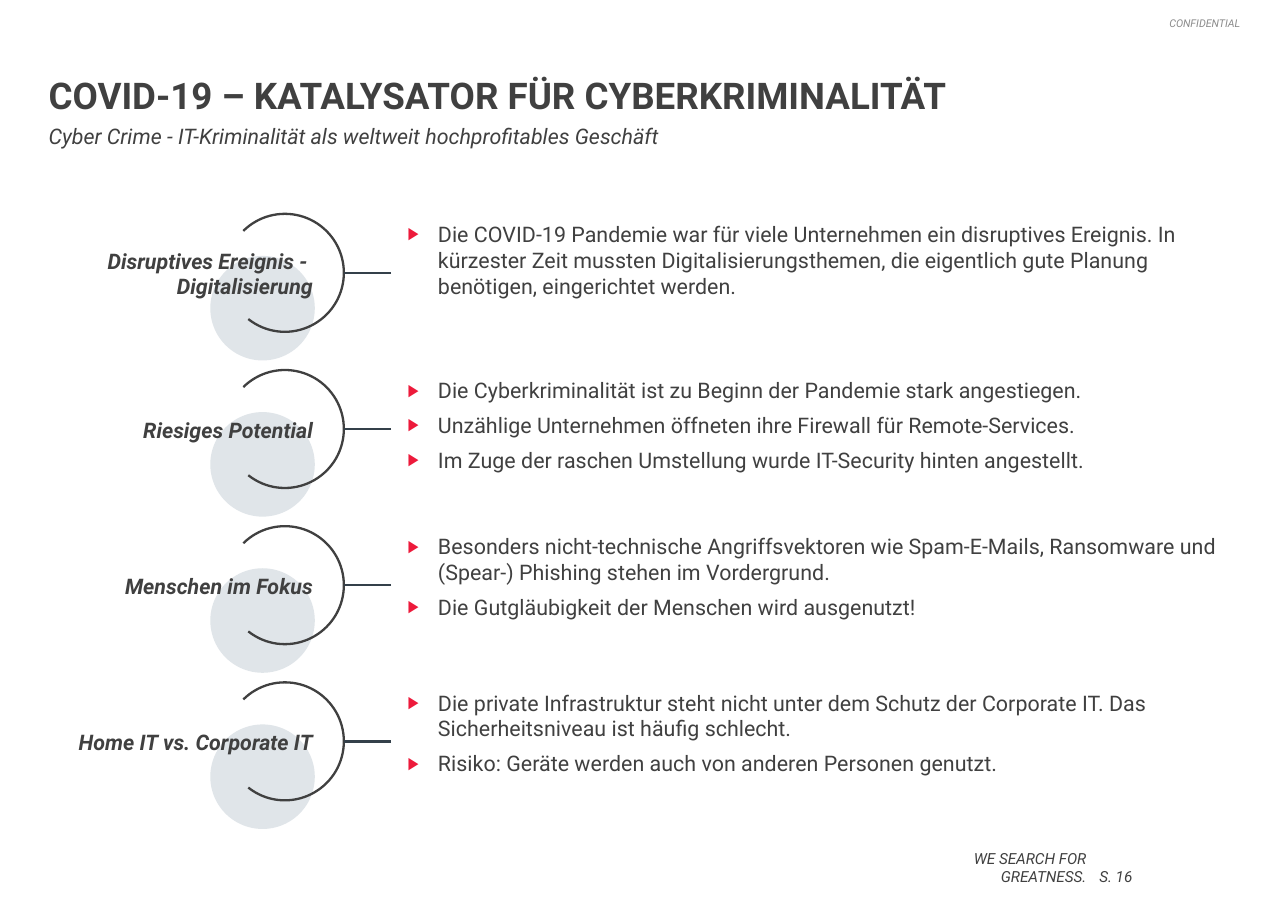
from lxml import etree
from pptx import Presentation
from pptx import util as u
from pptx.dml import color
from pptx.enum import shapes, text
from pptx.oxml import ns

COLORS = {"text": "404040", "muted": "8C8C8C", "disc": "E0E5E9", "line": "34404A", "bullet": "ED1A3B"}
FONT = "Roboto"
ROW_PITCH = 3.6
TOPICS = [
    (["Disruptives Ereignis - ", "Digitalisierung"],
     ["Die COVID-19 Pandemie war für viele Unternehmen ein disruptives Ereignis. In kürzester Zeit "
      "mussten Digitalisierungsthemen, die eigentlich gute Planung benötigen, eingerichtet werden."]),
    (["Riesiges Potential"],
     ["Die Cyberkriminalität ist zu Beginn der Pandemie stark angestiegen.",
      "Unzählige Unternehmen öffneten ihre Firewall für Remote-Services.",
      "Im Zuge der raschen Umstellung wurde IT-Security hinten angestellt."]),
    (["Menschen im Fokus"],
     ["Besonders nicht-technische Angriffsvektoren wie Spam-E-Mails, Ransomware und (Spear-) Phishing "
      "stehen im Vordergrund.",
      "Die Gutgläubigkeit der Menschen wird ausgenutzt!"]),
    (["Home IT vs. Corporate IT"],
     ["Die private Infrastruktur steht nicht unter dem Schutz der Corporate IT. Das Sicherheitsniveau "
      "ist häufig schlecht.",
      "Risiko: Geräte werden auch von anderen Personen genutzt."]),
]


def rgb(name):
    return color.RGBColor.from_string(COLORS[name])


def add_bullet(paragraph):
    properties = paragraph._p.get_or_add_pPr()
    properties.set("marL", str(u.Cm(0.7)))
    properties.set("indent", str(-u.Cm(0.7)))
    bullet_color = etree.SubElement(properties, ns.qn("a:buClr"))
    etree.SubElement(bullet_color, ns.qn("a:srgbClr"), val=COLORS["bullet"])
    etree.SubElement(properties, ns.qn("a:buSzPct"), val="80000")
    etree.SubElement(properties, ns.qn("a:buFont"), typeface="Arial")
    etree.SubElement(properties, ns.qn("a:buChar"), char="▶")


def write(shape, lines, size=14, fill="text", bold=False, italic=False, align=text.PP_ALIGN.LEFT,
          anchor=text.MSO_ANCHOR.TOP, inset=0, bullets=False, after=0, spacing=None):
    frame = shape.text_frame
    frame.word_wrap = True
    frame.auto_size = text.MSO_AUTO_SIZE.NONE
    frame.vertical_anchor = anchor
    frame.margin_left = frame.margin_right = 0
    frame.margin_top = frame.margin_bottom = u.Cm(inset)
    for index, line in enumerate(lines):
        paragraph = frame.add_paragraph() if index else frame.paragraphs[0]
        if bullets:
            add_bullet(paragraph)
        paragraph.alignment = align
        paragraph.space_before = u.Pt(0)
        paragraph.space_after = u.Pt(after)
        if spacing:
            paragraph.line_spacing = u.Pt(spacing)
        run = paragraph.add_run()
        run.text = line
        run.font.name = FONT
        run.font.size = u.Pt(size)
        run.font.bold = bold
        run.font.italic = italic
        run.font.color.rgb = rgb(fill)


def add_text(slide, left, top, width, height, lines, **style):
    box = slide.shapes.add_textbox(u.Cm(left), u.Cm(top), u.Cm(width), u.Cm(height))
    write(box, lines, **style)


def add_header(slide, left, top, width):
    title = slide.shapes.title
    title.left, title.top, title.width, title.height = u.Cm(left), u.Cm(top), u.Cm(width), u.Cm(2.69)
    write(title, ["COVID-19 – KATALYSATOR FÜR CYBERKRIMINALITÄT"], size=24, bold=True,
          anchor=text.MSO_ANCHOR.BOTTOM, spacing=25)
    add_text(slide, left, top + 2.84, width, 0.64,
             ["Cyber Crime - IT-Kriminalität als weltweit hochprofitables Geschäft"], italic=True)
    add_text(slide, left + 12.5, top + 0.38, width - 12.52, 0.3, ["CONFIDENTIAL"], size=7,
             fill="muted", italic=True, align=text.PP_ALIGN.RIGHT)


def add_ring(slide, left, top):
    disc = slide.shapes.add_shape(shapes.MSO_SHAPE.OVAL, u.Cm(left), u.Cm(top + 0.97), u.Cm(2.41), u.Cm(2.41))
    disc.shadow.inherit = False
    disc.fill.solid()
    disc.fill.fore_color.rgb = rgb("disc")
    disc.line.fill.background()

    arc = slide.shapes.add_shape(shapes.MSO_SHAPE.ARC, u.Cm(left + 0.36), u.Cm(top), u.Cm(2.72), u.Cm(2.72))
    arc.shadow.inherit = False
    arc.adjustments[0] = 135.14
    arc.adjustments[1] = 77
    arc.fill.background()
    arc.line.color.rgb = rgb("text")
    arc.line.width = u.Pt(1.5)

    middle = u.Cm(top + 1.36)
    stem = slide.shapes.add_connector(shapes.MSO_CONNECTOR.STRAIGHT, u.Cm(left + 4.17), middle,
                                      u.Cm(left + 3.08), middle)
    stem.line.color.rgb = rgb("line")
    stem.line.width = u.Pt(1.5)
    etree.SubElement(stem._element.spPr, ns.qn("a:effectLst"))


def add_topic(slide, left, top, width, label, points):
    add_ring(slide, left + 3.73, top + 0.03)
    add_text(slide, left, top + 0.58, 6.1, 1.65, label, bold=True, italic=True,
             align=text.PP_ALIGN.RIGHT, anchor=text.MSO_ANCHOR.MIDDLE)
    add_text(slide, left + 8.28, top, width - 8.28, 2.8, points, inset=0.2, bullets=True, after=6)


def add_footer(slide, left, top):
    style = dict(size=10, italic=True, anchor=text.MSO_ANCHOR.BOTTOM)
    add_text(slide, left, top, 3.18, 0.86, ["WE SEARCH FOR GREATNESS."], align=text.PP_ALIGN.RIGHT, **style)
    add_text(slide, left + 3.48, top, 1.2, 0.86, ["S. 16"], **style)


def main():
    presentation = Presentation()
    presentation.slide_width, presentation.slide_height = u.Cm(29.7), u.Cm(21)
    slide = presentation.slides.add_slide(presentation.slide_layouts[5])
    add_header(slide, 1.12, 0, 27.5)
    for row, (label, points) in enumerate(TOPICS):
        add_topic(slide, 1.12, 4.9 + row * ROW_PITCH, 27.48, label, points)
    add_footer(slide, 21.87, 19.56)
    presentation.save("out.pptx")


if __name__ == "__main__":
    main()
